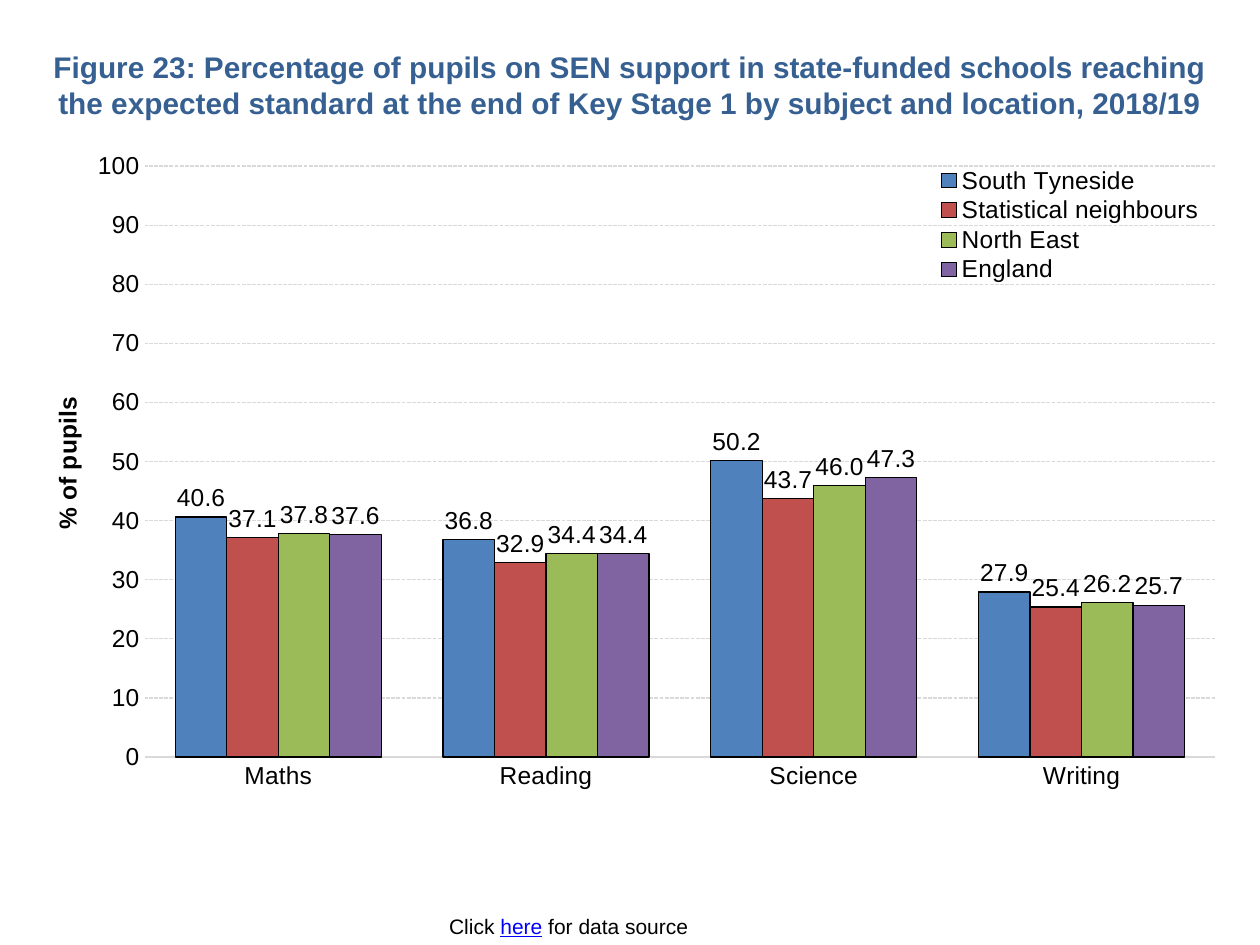
from lxml import etree
from pptx import Presentation
from pptx.chart.data import CategoryChartData
from pptx.dml.color import RGBColor
from pptx.enum.chart import XL_CHART_TYPE, XL_LABEL_POSITION, XL_LEGEND_POSITION, XL_TICK_MARK
from pptx.enum.dml import MSO_LINE
from pptx.enum.text import MSO_ANCHOR, PP_ALIGN
from pptx.oxml.ns import qn
from pptx.util import Pt

CLUSTERED = XL_CHART_TYPE.COLUMN_CLUSTERED
OUTSIDE_END = XL_LABEL_POSITION.OUTSIDE_END
LEGEND_TOP = XL_LEGEND_POSITION.TOP
NO_TICK = XL_TICK_MARK.NONE
FINE_DASH = MSO_LINE.SQUARE_DOT
MIDDLE = MSO_ANCHOR.MIDDLE
CENTER = PP_ALIGN.CENTER
TITLE_ONLY = 5

FONT = "Arial"
BLACK = "000000"
GRID = "D9D9D9"
SUBJECTS = ["Maths", "Reading", "Science", "Writing"]
LOCATIONS = [
    ("South Tyneside", "4F81BD", [40.6, 36.8, 50.2, 27.9]),
    ("Statistical neighbours", "C0504D", [37.1, 32.9, 43.7, 25.4]),
    ("North East", "9BBB59", [37.8, 34.4, 46.0, 26.2]),
    ("England", "8064A2", [37.6, 34.4, 47.3, 25.7]),
]


def colour(value):
    return RGBColor.from_string(value)


def style_font(font, size, value=BLACK, bold=False):
    font.name = FONT
    font.size = Pt(size)
    font.bold = bold
    font.color.rgb = colour(value)


def style_line(line, value):
    line.color.rgb = colour(value)
    line.width = Pt(0.75)


def add_span(para, text, size, value=BLACK, bold=False):
    span = para.add_run()
    span.text = text
    style_font(span.font, size, value, bold)
    return span


def set_layout(parent, index, **settings):
    for old in parent.findall(qn("c:layout")):
        parent.remove(old)
    layout = etree.Element(qn("c:layout"))
    manual = etree.SubElement(layout, qn("c:manualLayout"))
    for name, value in settings.items():
        etree.SubElement(manual, qn(f"c:{name}")).set("val", str(value))
    parent.insert(index, layout)


def place_title(page, left, top, width, height):
    title = page.shapes.title
    title.left, title.top, title.width, title.height = map(Pt, (left, top, width, height))
    frame = title.text_frame
    frame.word_wrap = True
    frame.vertical_anchor = MIDDLE
    para = frame.paragraphs[0]
    para.alignment = CENTER
    add_span(
        para,
        "Figure 23: Percentage of pupils on SEN support in state-funded schools "
        "reaching the expected standard at the end of Key Stage 1 by subject "
        "and location, 2018/19",
        17, "376092", True,
    )


def place_source(page, left, top, width, height):
    box = page.shapes.add_textbox(*map(Pt, (left, top, width, height)))
    box.text_frame.word_wrap = False
    para = box.text_frame.paragraphs[0]
    para.alignment = CENTER
    add_span(para, "Click ", 12)
    add_span(para, "here", 12, "0000FF").font.underline = True
    add_span(para, " for data source", 12)


def style_axes(chart):
    subjects, percent = chart.category_axis, chart.value_axis
    for axis in (subjects, percent):
        axis.major_tick_mark = axis.minor_tick_mark = NO_TICK
        style_font(axis.tick_labels.font, 14)
    style_line(subjects.format.line, GRID)

    percent.minimum_scale, percent.maximum_scale = 0, 100
    percent.major_unit = 10
    percent.tick_labels.number_format = "#,##0"
    percent.tick_labels.number_format_is_linked = False
    percent.format.line.fill.background()
    grid = percent.major_gridlines.format.line
    style_line(grid, GRID)
    grid.dash_style = FINE_DASH

    title = percent.axis_title
    add_span(title.text_frame.paragraphs[0], "% of pupils", 14, BLACK, True)
    set_layout(title._element, 1, xMode="edge", yMode="edge", x=0.01, y=0.36)


def style_bars(chart):
    plot = chart.plots[0]
    plot.gap_width = 120
    plot.overlap = 0
    plot.vary_by_categories = False
    for series, (_, fill, _) in zip(plot.series, LOCATIONS):
        series.format.fill.solid()
        series.format.fill.fore_color.rgb = colour(fill)
        style_line(series.format.line, BLACK)
        labels = series.data_labels
        labels.show_value = True
        labels.position = OUTSIDE_END
        labels.number_format = "#,##0.0"
        labels.number_format_is_linked = False
        style_font(labels.font, 14)


def place_chart(page, left, top, width, height):
    data = CategoryChartData(number_format="0.0")
    data.categories = SUBJECTS
    for name, _, values in LOCATIONS:
        data.add_series(name, values)
    frame = page.shapes.add_chart(CLUSTERED, *map(Pt, (left, top, width, height)), data)
    chart = frame.chart
    chart.has_title = False
    style_font(chart.font, 10)
    style_axes(chart)
    style_bars(chart)
    set_layout(chart._chartSpace.chart.plotArea, 0, layoutTarget="inner",
               xMode="edge", yMode="edge", x=0.092, y=0.022, w=0.9, h=0.883)

    chart.has_legend = True
    legend = chart.legend
    legend.position = LEGEND_TOP
    legend.include_in_layout = False
    style_font(legend.font, 14)
    set_layout(legend._element, 1, xMode="edge", yMode="edge",
               x=0.75, y=0.02, w=0.24, h=0.18)


def main():
    deck = Presentation()
    deck.slide_width, deck.slide_height = Pt(720), Pt(540)
    page = deck.slides.add_slide(deck.slide_layouts[TITLE_ONLY])
    place_title(page, 20, 18, 680, 60.5)
    place_source(page, 247.5, 518.5, 155, 21.5)
    place_chart(page, 20, 86.5, 680, 382.5)
    deck.save("out.pptx")


if __name__ == "__main__":
    main()
